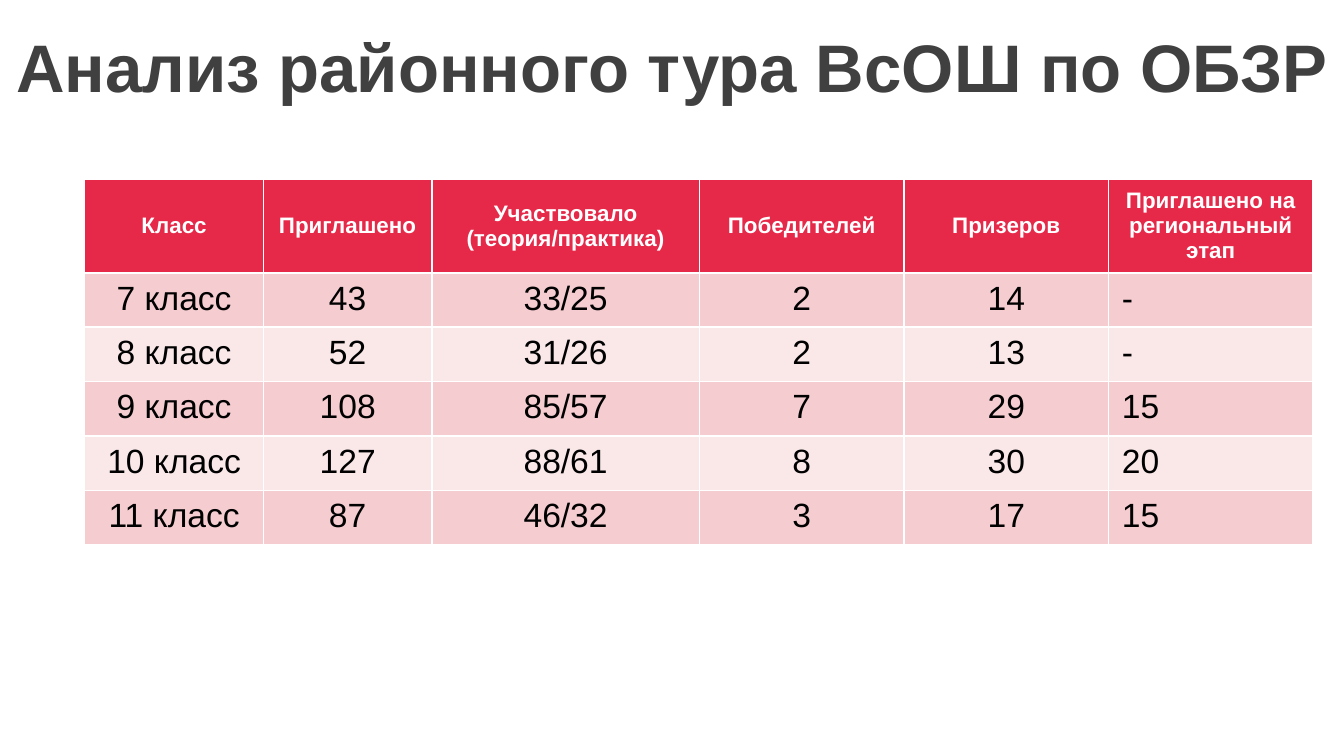
import pptx
import pptx.dml.color
import pptx.enum.text
import pptx.util

Inches, Pt = pptx.util.Inches, pptx.util.Pt
ALIGN, ANCHOR = pptx.enum.text.PP_ALIGN, pptx.enum.text.MSO_ANCHOR
FONT = "Arial"
COLORS = {
    "title": "404040",
    "head": "E62949",
    "odd": "F5CDD0",
    "even": "FAE8E9",
    "white": "FFFFFF",
    "black": "000000",
}
WIDTHS = [1.33, 1.25, 1.99, 1.52, 1.52, 1.52]
HEADS = ["Класс", "Приглашено", "Участвовало (теория/практика)",
         "Победителей", "Призеров", "Приглашено на региональный этап"]
ROWS = [
    ["7 класс", "43", "33/25", "2", "14", "-"],
    ["8 класс", "52", "31/26", "2", "13", "-"],
    ["9 класс", "108", "85/57", "7", "29", "15"],
    ["10 класс", "127", "88/61", "8", "30", "20"],
    ["11 класс", "87", "46/32", "3", "17", "15"],
]


def color(name):
    return pptx.dml.color.RGBColor.from_string(COLORS[name])


def write(frame, text, size, tint, bold=False, align=ALIGN.CENTER):
    line = frame.paragraphs[0]
    line.alignment = align
    run = line.add_run()
    run.text = text
    font = run.font
    font.name, font.size, font.bold = FONT, Pt(size), bold
    font.color.rgb = color(tint)


def title(slide, left, top, width, height):
    box = slide.shapes.add_textbox(*map(Inches, (left, top, width, height)))
    frame = box.text_frame
    frame.word_wrap = True
    frame.vertical_anchor = ANCHOR.MIDDLE
    write(frame, "Анализ районного тура ВсОШ по ОБЗР", 36, "title", True)


def results(slide, left, top, width, height):
    """Place the table; its default style draws the white cell edges."""
    data = [HEADS] + ROWS
    table = slide.shapes.add_table(
        len(data), len(HEADS), *map(Inches, (left, top, width, height))).table
    for col, share in zip(table.columns, WIDTHS):
        col.width = Inches(width * share / sum(WIDTHS))
    for r, row in enumerate(data):
        for c, text in enumerate(row):
            cell = table.cell(r, c)
            cell.fill.solid()
            if r == 0:
                cell.fill.fore_color.rgb = color("head")
                cell.vertical_anchor = ANCHOR.MIDDLE
                write(cell.text_frame, text, 12, "white", True)
            else:
                cell.fill.fore_color.rgb = color("odd" if r % 2 else "even")
                last = c == len(HEADS) - 1
                write(cell.text_frame, text, 18, "black",
                      align=ALIGN.LEFT if last else ALIGN.CENTER)


def main():
    deck = pptx.Presentation()
    deck.slide_width, deck.slide_height = Inches(10), Inches(10 * 9 / 16)
    slide = deck.slides.add_slide(deck.slide_layouts[6])
    title(slide, 0, 0, 10, 0.97)
    results(slide, 0.63, 1.33, 9.14, 2.43)
    deck.save("out.pptx")


if __name__ == "__main__":
    main()
